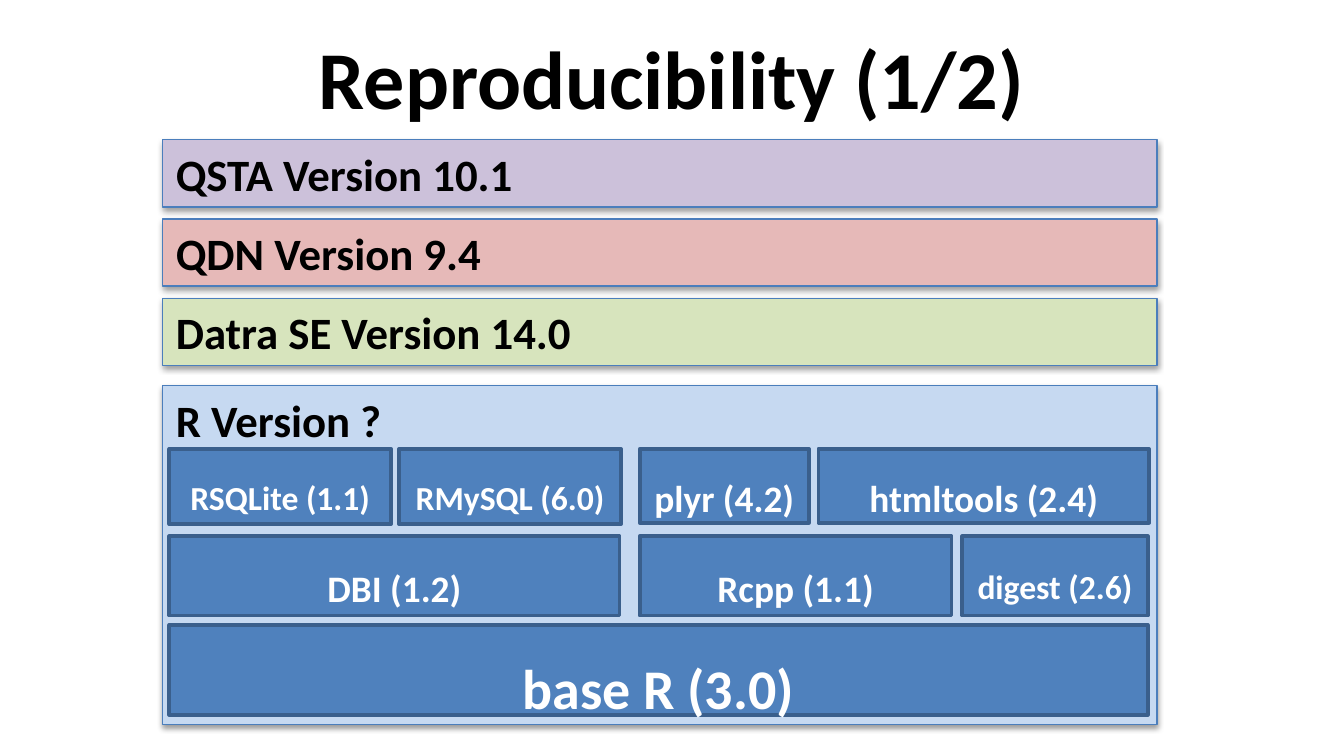
"""Build a slide that contrasts single-version software with layered R packages."""
from lxml import etree
from pptx import Presentation
from pptx.dml.color import RGBColor
from pptx.enum.shapes import MSO_SHAPE
from pptx.enum.text import MSO_ANCHOR, PP_ALIGN
from pptx.oxml.ns import qn
from pptx.util import Inches, Pt

RECTANGLE = MSO_SHAPE.RECTANGLE
TOP, MIDDLE = MSO_ANCHOR.TOP, MSO_ANCHOR.MIDDLE
LEFT, CENTER = PP_ALIGN.LEFT, PP_ALIGN.CENTER

TITLE = "Reproducibility (1/2)"
PROGRAMS = [
    ("QSTA Version 10.1", "CCC1DA"),
    ("QDN Version 9.4", "E6B9B8"),
    ("Datra SE Version 14.0", "D7E4BD"),
]
R_PANEL = ("R Version ?", "C6D9F1")
PACKAGE_ROWS = [
    {"top": 3.34, "packages": [
        ("RSQLite (1.1)", 1.26, 1.65, 0.56, 18),
        ("RMySQL (6.0)", 2.97, 1.65, 0.56, 18),
        ("plyr (4.2)", 4.76, 1.26, 0.55, 20),
        ("htmltools (2.4)", 6.09, 2.46, 0.55, 20),
    ]},
    {"top": 3.99, "packages": [
        ("DBI (1.2)", 1.26, 3.35, 0.59, 20),
        ("Rcpp (1.1)", 4.76, 2.32, 0.59, 20),
        ("digest (2.6)", 7.16, 1.38, 0.59, 18),
    ]},
    {"top": 4.65, "packages": [
        ("base R (3.0)", 1.26, 7.28, 0.67, 30),
    ]},
]

THEME = {
    "font": "Calibri",
    "title_size": 44,
    "panel_size": 24,
    "dark": "000000",
    "light": "FFFFFF",
    "package": "4F81BD",
    "package_line": "3A5F8C",
    "panel_line": "4B7EBC",
}
PAGE_WIDTH = 10
PAGE_HEIGHT = PAGE_WIDTH * 9 / 16
PANEL_LEFT, PANEL_WIDTH = 1.21, 7.4
PROGRAM_TOP, PROGRAM_HEIGHT, PROGRAM_STEP = 1.04, 0.5, 0.59
R_TOP, R_HEIGHT = 2.87, 2.52


def color(value):
    """Turn a hex string into a colour."""
    return RGBColor.from_string(value)


def write(box, text, size, ink, paragraph_format, anchor):
    """Put one bold paragraph into a box."""
    frame = box.text_frame
    frame.word_wrap = True
    frame.vertical_anchor = anchor
    para = frame.paragraphs[0]
    for name, value in paragraph_format.items():
        setattr(para, name, value)
    span = para.add_run()
    span.text = text
    font_format = {"name": THEME["font"], "size": Pt(size), "bold": True}
    for name, value in font_format.items():
        setattr(span.font, name, value)
    span.font.color.rgb = color(ink)


def add_box(page, place, fill, line, line_width):
    """Add a flat rectangle."""
    box = page.shapes.add_shape(RECTANGLE, *map(Inches, place))
    box.shadow.inherit = False
    box.fill.solid()
    box.fill.fore_color.rgb = color(fill)
    box.line.color.rgb = color(line)
    box.line.width = Pt(line_width)
    return box


def add_shadow(box):
    """Give a box a soft shadow below it."""
    effects = box._element.spPr.find(qn("a:effectLst"))
    shadow = etree.SubElement(
        effects, qn("a:outerShdw"), blurRad=str(Pt(3.1)), dist=str(Pt(1.6)),
        dir="5400000", rotWithShape="0")
    shade = etree.SubElement(shadow, qn("a:srgbClr"), val=THEME["dark"])
    etree.SubElement(shade, qn("a:alpha"), val="38000")


def add_panel(page, text, fill, top, height):
    """Add a full-width labelled panel."""
    place = (PANEL_LEFT, top, PANEL_WIDTH, height)
    box = add_box(page, place, fill, THEME["panel_line"], 0.75)
    add_shadow(box)
    write(box, text, THEME["panel_size"], THEME["dark"], {"alignment": LEFT}, TOP)


def main():
    """Assemble and save the deck."""
    deck = Presentation()
    deck.slide_width, deck.slide_height = Inches(PAGE_WIDTH), Inches(PAGE_HEIGHT)
    page = deck.slides.add_slide(deck.slide_layouts[6])

    add_panel(page, *R_PANEL, R_TOP, R_HEIGHT)
    title = page.shapes.add_textbox(*map(Inches, (0.5, 0.1, 9, 0.94)))
    write(title, TITLE, THEME["title_size"], THEME["dark"], {"alignment": CENTER}, MIDDLE)

    for index, (text, fill) in enumerate(PROGRAMS):
        add_panel(page, text, fill, PROGRAM_TOP + index * PROGRAM_STEP, PROGRAM_HEIGHT)

    package_format = {"alignment": CENTER, "line_spacing": 1.5}
    for row in PACKAGE_ROWS:
        for text, left, width, height, size in row["packages"]:
            place = (left, row["top"], width, height)
            box = add_box(page, place, THEME["package"], THEME["package_line"], 2)
            write(box, text, size, THEME["light"], package_format, MIDDLE)

    deck.save("out.pptx")


if __name__ == "__main__":
    main()
